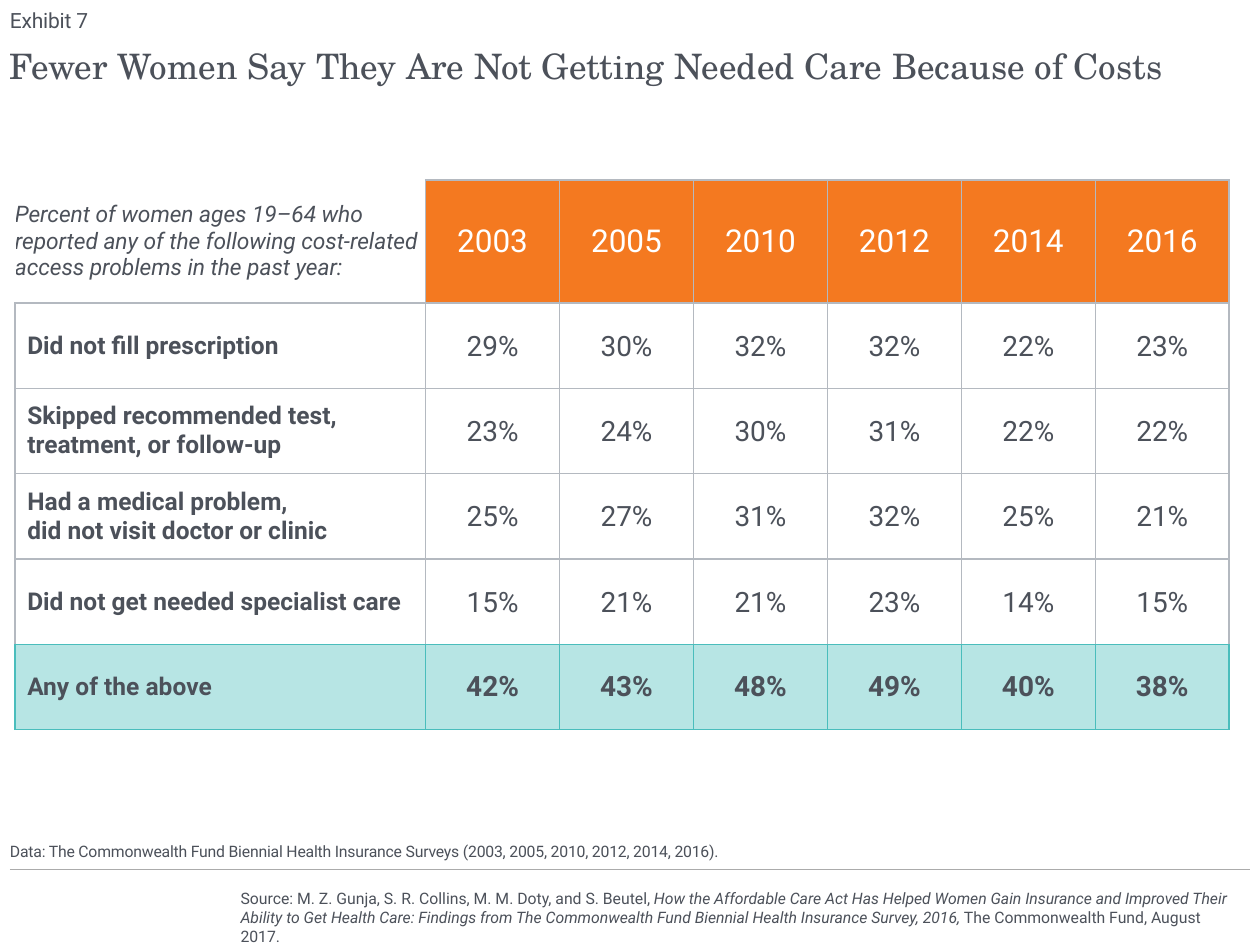
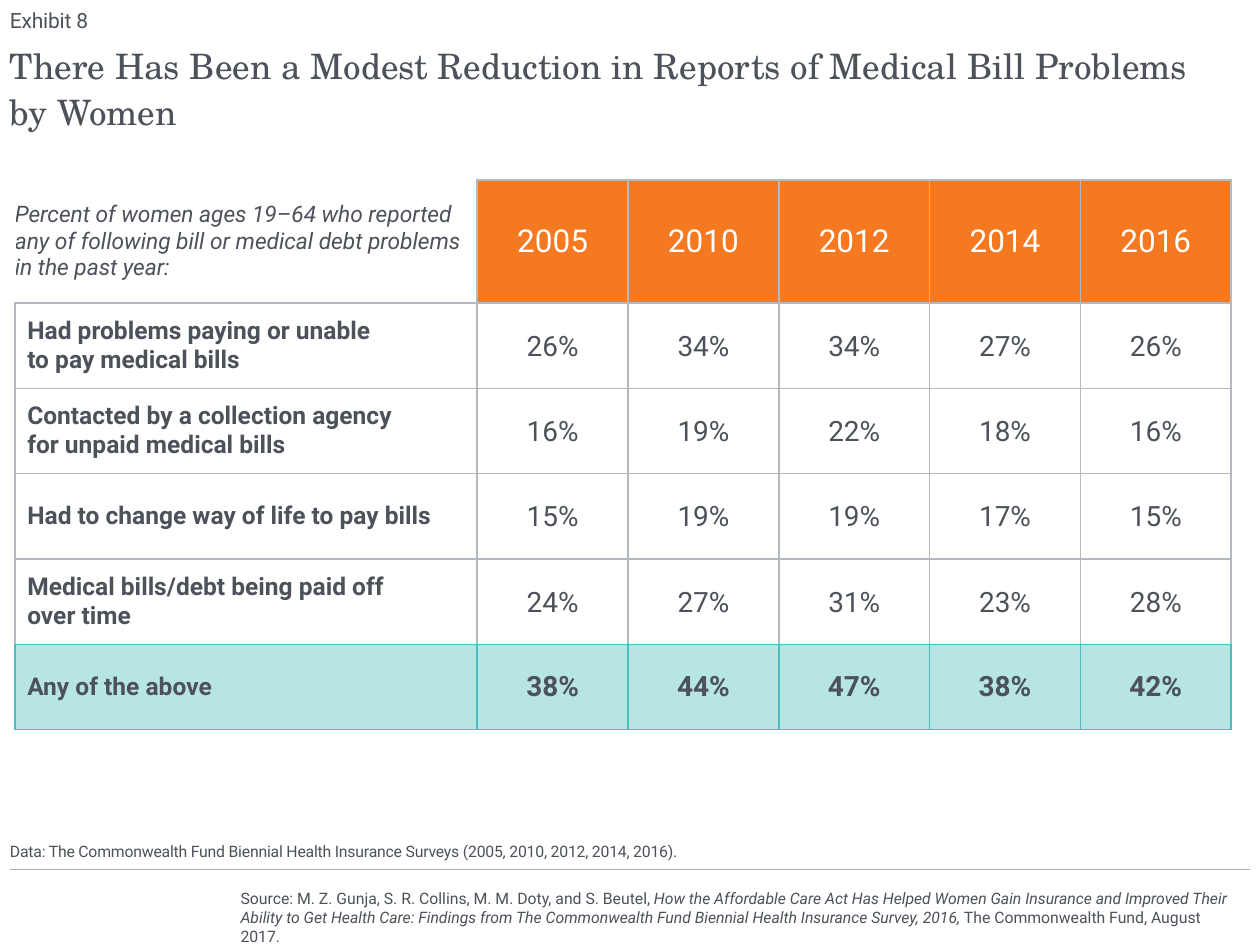
from lxml.etree import SubElement
from pptx import Presentation
from pptx.dml.color import RGBColor
from pptx.enum.shapes import MSO_CONNECTOR
from pptx.enum.text import MSO_ANCHOR, MSO_AUTO_SIZE, PP_ALIGN
from pptx.oxml.ns import qn
from pptx.util import Cm, Pt

LINE = MSO_CONNECTOR.STRAIGHT
TOP, MID, LOW = MSO_ANCHOR.TOP, MSO_ANCHOR.MIDDLE, MSO_ANCHOR.BOTTOM
LEFT, CENTER = PP_ALIGN.LEFT, PP_ALIGN.CENTER
FIXED = MSO_AUTO_SIZE.NONE

HUE = {
    "ink": "4C515A", "white": "FFFFFF", "orange": "F47920", "mint": "B7E5E4",
    "teal": "4ABDBC", "gray": "B4B9C0", "rule": "ABABAB",
}
SANS, SERIF = "Roboto", "TeX Gyre Schola"
SIDES = ("left", "right", "top", "bottom")

LOOKS = {
    "title": {"name": SERIF, "size": Pt(20), "bold": False},
    "label": {"name": SANS, "size": Pt(12), "bold": False},
    "note": {"name": SANS, "size": Pt(9), "bold": False},
    "cite": {"name": SANS, "size": Pt(9), "italic": True},
    "ask": {"name": SANS, "size": Pt(13), "bold": False, "italic": True},
    "year": {"name": SANS, "size": Pt(18), "bold": False},
    "row": {"name": SANS, "size": Pt(14), "bold": True},
    "value": {"name": SANS, "size": Pt(16), "bold": False},
    "total": {"name": SANS, "size": Pt(16), "bold": True},
}

SOURCE = [
    ("Source: M. Z. Gunja, S. R. Collins, M. M. Doty, and S. Beutel, ", "note"),
    ("How the Affordable Care Act Has Helped Women Gain Insurance and Improved "
     "Their Ability to Get Health Care: Findings from The Commonwealth Fund "
     "Biennial Health Insurance Survey, 2016, ", "cite"),
    ("The Commonwealth Fund, August 2017.", "note"),
]

EXHIBITS = [
    {
        "label": "Exhibit 7",
        "title": "Fewer Women Say They Are Not Getting Needed Care Because of Costs",
        "ask": "Percent of women ages 19–64 who reported any of the following "
               "cost-related access problems in the past year:",
        "years": [2003, 2005, 2010, 2012, 2014, 2016],
        "widths": (8.28, 2.7),
        "rows": [
            ("Did not fill prescription", [29, 30, 32, 32, 22, 23]),
            ("Skipped recommended test, treatment, or follow-up",
             [23, 24, 30, 31, 22, 22]),
            ("Had a medical problem,\ndid not visit doctor or clinic",
             [25, 27, 31, 32, 25, 21]),
            ("Did not get needed specialist care", [15, 21, 21, 23, 14, 15]),
            ("Any of the above", [42, 43, 48, 49, 40, 38]),
        ],
    },
    {
        "label": "Exhibit 8",
        "title": "There Has Been a Modest Reduction in Reports of Medical Bill "
                 "Problems\nby Women",
        "ask": "Percent of women ages 19–64 who reported\n"
               "any of following bill or medical debt problems\nin the past year:",
        "years": [2005, 2010, 2012, 2014, 2016],
        "widths": (9.32, 3.04),
        "rows": [
            ("Had problems paying or unable\nto pay medical bills",
             [26, 34, 34, 27, 26]),
            ("Contacted by a collection agency\nfor unpaid medical bills",
             [16, 19, 22, 18, 16]),
            ("Had to change way of life to pay bills", [15, 19, 19, 17, 15]),
            ("Medical bills/debt being paid off\nover time", [24, 27, 31, 23, 28]),
            ("Any of the above", [38, 44, 47, 38, 42]),
        ],
    },
]


def write(para, text, look, hue="ink"):
    """Append text to a paragraph, with a line break at each newline."""
    for i, line in enumerate(text.split("\n")):
        if i:
            para.add_line_break()
        run = para.add_run()
        run.text = line
        for key, val in LOOKS[look].items():
            setattr(run.font, key, val)
        run.font.color.rgb = RGBColor.from_string(HUE[hue])
        if look in ("label", "note") and not text.startswith(("Source", "The")):
            run.font._element.set("spc", "-10")
    for gap in para._p.findall(qn("a:br")):
        if gap.find(qn("a:rPr")) is None:
            SubElement(gap, qn("a:rPr"), sz=str(int(LOOKS[look]["size"].pt * 100)))


def dress(cell, fill, edges, pad):
    """Set borders (hues in the order of SIDES), fill and margins (cm)."""
    props = cell._tc.get_or_add_tcPr()
    for side, hue in zip(SIDES, edges):
        line = SubElement(props, qn("a:ln" + side[0].upper()), w=str(Pt(1)))
        paint = SubElement(line, qn("a:solidFill"))
        SubElement(paint, qn("a:srgbClr"), val=HUE[hue])
    cell.fill.solid()
    cell.fill.fore_color.rgb = RGBColor.from_string(HUE[fill])
    for side, size in zip(SIDES, pad):
        setattr(cell, "margin_" + side, Cm(size))
    cell.vertical_anchor = MID


deck = Presentation()
deck.slide_width, deck.slide_height = Cm(25.4), Cm(19.05)
layout = deck.slide_layouts.get_by_name("Comparison")

for item in EXHIBITS:
    slide = deck.slides.add_slide(layout)
    years = item["years"]

    # Footer rule and source
    rule = slide.shapes.add_connector(LINE, Cm(0.2), Cm(17.53), Cm(25.2), Cm(17.53))
    rule.line.color.rgb = RGBColor.from_string(HUE["rule"])
    rule.line.width = Pt(0.75)
    SubElement(rule._element.spPr, qn("a:effectLst"))
    box = slide.shapes.add_textbox(Cm(4.6), Cm(17.8), Cm(20.6), Cm(1.02))
    box.text_frame.word_wrap = True
    for text, look in SOURCE:
        write(box.text_frame.paragraphs[0], text, look)

    # Title, exhibit label and data note; the other placeholders go
    data = ("Data: The Commonwealth Fund Biennial Health Insurance Surveys "
            f"({', '.join(map(str, years))}).")
    spots = {
        0: (item["title"], "title", 0.81, 2.11, TOP),
        1: (item["label"], "label", 0.03, 0.64, LOW),
        3: (data, "note", 15.98, 1.37, LOW),
    }
    for hold in list(slide.placeholders):
        key = hold.placeholder_format.idx
        if key not in spots:
            hold._element.getparent().remove(hold._element)
            continue
        text, look, top, high, anchor = spots[key]
        hold.left, hold.top, hold.width, hold.height = Cm(0.2), Cm(top), Cm(25), Cm(high)
        frame = hold.text_frame
        for side in SIDES:
            setattr(frame, "margin_" + side, 0)
        frame.auto_size, frame.word_wrap = FIXED, True
        frame.vertical_anchor = anchor
        para = frame.paragraphs[0]
        para.alignment, para.space_before = LEFT, Pt(0)
        para.line_spacing = 1.1 if look == "title" else 1.0
        write(para, text, look)

    # Table
    first, rest = item["widths"]
    grid = [(item["ask"], years)] + item["rows"]
    last = len(grid) - 1
    table = slide.shapes.add_table(
        len(grid), len(years) + 1, Cm(0.3), Cm(3.63),
        Cm(first + rest * len(years)), Cm(2.48 + 1.72 * last)).table
    table.first_row = table.horz_banding = False
    for c, col in enumerate(table.columns):
        col.width = Cm(rest if c else first)
    for r, (name, nums) in enumerate(grid):
        table.rows[r].height = Cm(1.72 if r else 2.48)
        for c, entry in enumerate([name, *nums]):
            cell = table.cell(r, c)
            edges, fill, hue = ["gray"] * 4, "white", "ink"
            look, pad = ("value", [0.03] * 3 + [0]) if c else ("row", [0.25, 0.25, 0.13, 0.13])
            if r == 0 and c == 0:
                look, pad = "ask", [0] * 4
                edges = ["white", "gray", "white", "gray"]
            elif r == 0:
                look, fill, hue, pad = "year", "orange", "white", [0.13] * 4
            elif r == last:
                edges, fill = ["teal"] * 4, "mint"
                if c:
                    look, pad = "total", [0.13] * 4
            elif r == last - 1:
                edges[3] = "teal"
            dress(cell, fill, edges, pad)
            para = cell.text_frame.paragraphs[0]
            para.alignment = CENTER if c else LEFT
            write(para, f"{entry}%" if r and c else str(entry), look, hue)

deck.save("out.pptx")
